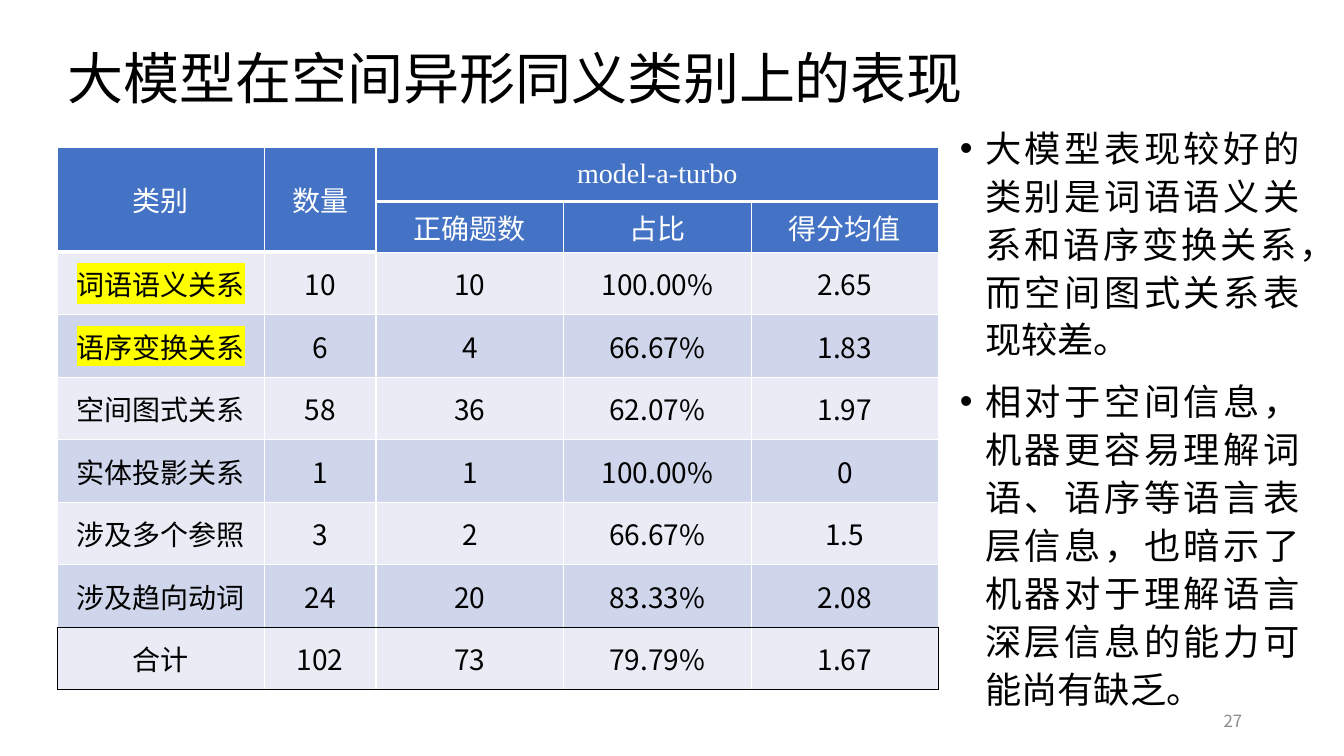
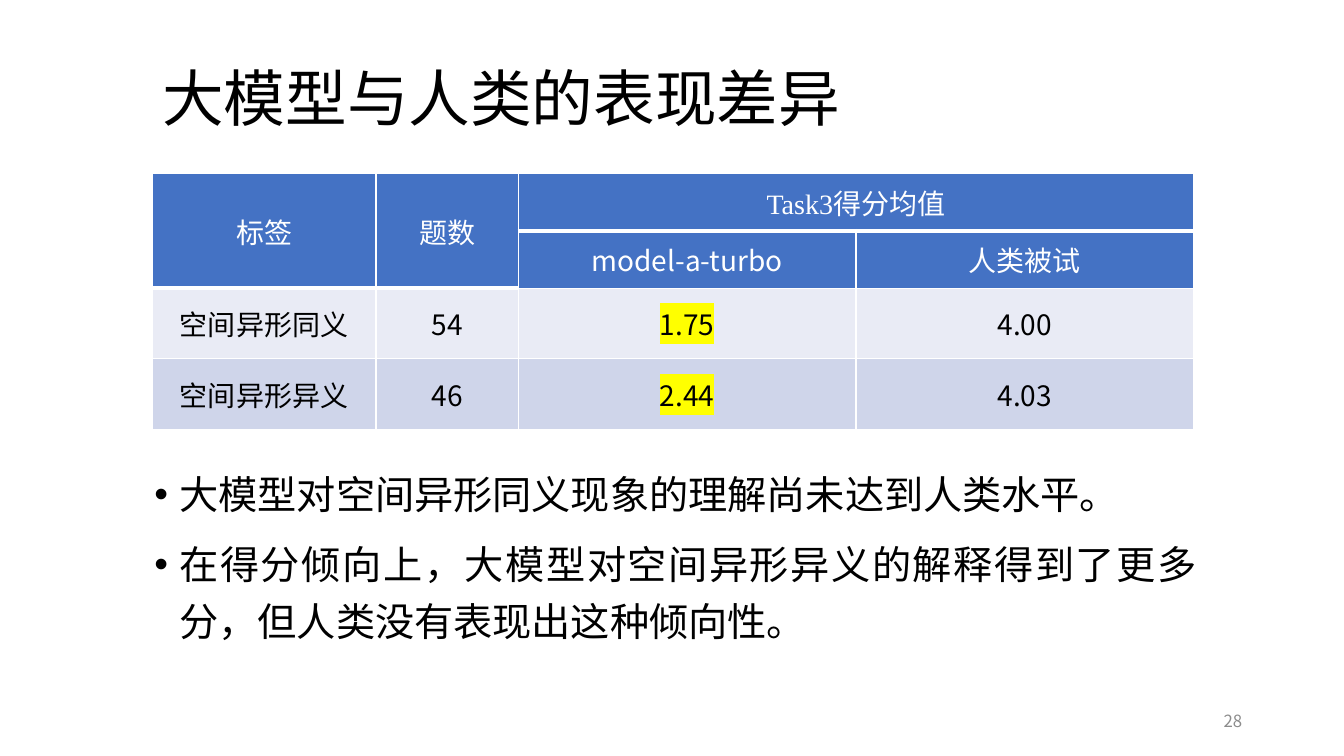
from dataclasses import dataclass

from lxml import etree
from pptx import Presentation
from pptx.dml.color import RGBColor
from pptx.enum.text import MSO_ANCHOR, MSO_AUTO_SIZE, PP_ALIGN
from pptx.oxml.ns import qn
from pptx.util import Emu, Pt

EMU_PER_PX = 9144
SLIDE_WIDTH, SLIDE_HEIGHT = 1333, 750
TITLE_AND_CONTENT = 1

MIDDLE, TOP = MSO_ANCHOR.MIDDLE, MSO_ANCHOR.TOP
LEFT, CENTER, RIGHT, JUSTIFY = PP_ALIGN.LEFT, PP_ALIGN.CENTER, PP_ALIGN.RIGHT, PP_ALIGN.JUSTIFY
NO_AUTOFIT = MSO_AUTO_SIZE.NONE

BLACK = RGBColor(0x00, 0x00, 0x00)
WHITE = RGBColor(0xFF, 0xFF, 0xFF)
GRAY = RGBColor(0x8C, 0x8C, 0x8C)
YELLOW = RGBColor(0xFF, 0xFF, 0x00)
HEADER_BLUE = RGBColor(0x44, 0x72, 0xC4)
BANDS = (RGBColor(0xE9, 0xEB, 0xF5), RGBColor(0xCF, 0xD5, 0xEA))

SANS = "Noto Sans CJK SC"
SERIF = "Times New Roman"
TABLE_SIZE = 20
HEADER_ROWS = 2
LABEL_COLUMNS = 2
BULLET_INDENT = 25


@dataclass(frozen=True)
class Box:
    left: int
    top: int
    width: int
    height: int

    def emu(self) -> tuple[Emu, ...]:
        return tuple(px(n) for n in (self.left, self.top, self.width, self.height))


@dataclass(frozen=True)
class TextBlock:
    box: Box
    size: float
    line_spacing: float
    paragraphs: tuple[str, ...]


@dataclass(frozen=True)
class ResultTable:
    """Two header rows, then data; the columns after the labels share one group header."""
    left: int
    top: int
    columns: tuple[int, ...]
    row_heights: tuple[int, ...]
    rows: tuple[tuple[str, ...], ...]
    highlighted: frozenset[str]
    has_total: bool = False


@dataclass(frozen=True)
class ResultSlide:
    number: int
    title: TextBlock
    table: ResultTable
    body: TextBlock


PAGE_NUMBER_BOX = Box(942, 695, 300, 40)

RESULT_SLIDES = (
    ResultSlide(
        27,
        TextBlock(Box(57, 35, 1219, 92), 40, 0.9, ("大模型在空间异形同义类别上的表现",)),
        ResultTable(
            57, 146, (205, 111) + (186,) * 3, (54, 50) + (62,) * 7,
            (
                ("类别", "数量", "model-a-turbo", "", ""),
                ("", "", "正确题数", "占比", "得分均值"),
                ("词语语义关系", "10", "10", "100.00%", "2.65"),
                ("语序变换关系", "6", "4", "66.67%", "1.83"),
                ("空间图式关系", "58", "36", "62.07%", "1.97"),
                ("实体投影关系", "1", "1", "100.00%", "0"),
                ("涉及多个参照", "3", "2", "66.67%", "1.5"),
                ("涉及趋向动词", "24", "20", "83.33%", "2.08"),
                ("合计", "102", "73", "79.79%", "1.67"),
            ),
            frozenset({"词语语义关系", "语序变换关系"}),
            has_total=True,
        ),
        TextBlock(Box(942, 116, 357, 599), 25.9, 1.1, (
            "大模型表现较好的类别是词语语义关系和语序变换关系，而空间图式关系表现较差。",
            "相对于空间信息，机器更容易理解词语、语序等语言表层信息，"
            "也暗示了机器对于理解语言深层信息的能力可能尚有缺乏。",
        )),
    ),
    ResultSlide(
        28,
        TextBlock(Box(151, 55, 978, 92), 44, 0.9, ("大模型与人类的表现差异",)),
        ResultTable(
            151, 172, (222, 141, 335, 335), (57, 57, 70, 70),
            (
                ("标签", "题数", "Task3得分均值", ""),
                ("", "", "model-a-turbo", "人类被试"),
                ("空间异形同义", "54", "1.75", "4.00"),
                ("空间异形异义", "46", "2.44", "4.03"),
            ),
            frozenset({"1.75", "2.44"}),
        ),
        TextBlock(Box(143, 452, 1054, 274), 28, 1.2, (
            "大模型对空间异形同义现象的理解尚未达到人类水平。",
            "在得分倾向上，大模型对空间异形异义的解释得到了更多分，但人类没有表现出这种倾向性。",
        )),
    ),
)


def px(length: int) -> Emu:
    return Emu(length * EMU_PER_PX)


def add_solid_color(parent, color: RGBColor) -> None:
    etree.SubElement(parent, qn("a:srgbClr"), val=str(color))


def style_runs(paragraph, size: float, color: RGBColor, latin: str = SANS,
               highlight: RGBColor | None = None) -> None:
    for run in paragraph.runs:
        font = run.font
        font.size, font.bold, font.name = Pt(size), False, latin
        font.color.rgb = color
        latin_element = font._element.find(qn("a:latin"))
        east_asian = etree.Element(qn("a:ea"), typeface=SANS)
        latin_element.addnext(east_asian)
        if highlight is not None:
            marker = etree.Element(qn("a:highlight"))
            add_solid_color(marker, highlight)
            latin_element.addprevious(marker)


def fill_placeholder(shape, block: TextBlock, anchor, alignment) -> None:
    shape.left, shape.top, shape.width, shape.height = block.box.emu()
    text_frame = shape.text_frame
    text_frame.text = "\n".join(block.paragraphs)
    text_frame.auto_size = NO_AUTOFIT
    text_frame.word_wrap = True
    text_frame.vertical_anchor = anchor
    for paragraph in text_frame.paragraphs:
        paragraph.alignment = alignment
        paragraph.line_spacing = block.line_spacing
        style_runs(paragraph, block.size, BLACK)


def add_bullets(shape) -> None:
    for paragraph in shape.text_frame.paragraphs:
        paragraph.space_before = Pt(10)
        properties = paragraph._p.get_or_add_pPr()
        properties.set("marL", str(px(BULLET_INDENT)))
        properties.set("indent", str(-px(BULLET_INDENT)))
        etree.SubElement(properties, qn("a:buFont"), typeface="Arial")
        etree.SubElement(properties, qn("a:buChar"), char="•")


def add_border(cell, side: str, color: RGBColor, width: int) -> None:
    properties = cell._tc.get_or_add_tcPr()
    line = etree.SubElement(properties, qn(f"a:ln{side}"), w=str(Pt(width)))
    add_solid_color(etree.SubElement(line, qn("a:solidFill")), color)


def add_borders(cell, row: int, column: int, table: ResultTable) -> None:
    """White grid, with a black outline around the total row."""
    last_row, last_column = len(table.rows) - 1, len(table.columns) - 1
    total = table.has_total and row == last_row
    above_total = table.has_total and row == last_row - 1
    black_sides = {
        "L": total and column == 0,
        "R": total and column == last_column,
        "T": total,
        "B": total or above_total,
    }
    for side, is_black in black_sides.items():
        width = 3 if side == "B" and row == 0 else 1
        add_border(cell, side, BLACK if is_black else WHITE, width)


def fill_cell(cell, text: str, row: int, highlight: RGBColor | None) -> None:
    is_header = row < HEADER_ROWS
    cell.fill.solid()
    cell.fill.fore_color.rgb = HEADER_BLUE if is_header else BANDS[row % 2]
    cell.vertical_anchor = MIDDLE
    cell.text_frame.text = text
    paragraph = cell.text_frame.paragraphs[0]
    paragraph.alignment = CENTER
    style_runs(paragraph, TABLE_SIZE, WHITE if is_header else BLACK,
               SERIF if row == 0 else SANS, highlight)


def add_result_table(slide, data: ResultTable) -> None:
    box = Box(data.left, data.top, sum(data.columns), sum(data.row_heights))
    table = slide.shapes.add_table(len(data.rows), len(data.columns), *box.emu()).table
    table.first_row = table.horz_banding = False
    for column, width in zip(table.columns, data.columns):
        column.width = px(width)
    for row, height in zip(table.rows, data.row_heights):
        row.height = px(height)
    for row, texts in enumerate(data.rows):
        for column, text in enumerate(texts):
            cell = table.cell(row, column)
            add_borders(cell, row, column, data)
            fill_cell(cell, text, row, YELLOW if text in data.highlighted else None)
    for column in range(LABEL_COLUMNS):
        table.cell(0, column).merge(table.cell(HEADER_ROWS - 1, column))
    table.cell(0, LABEL_COLUMNS).merge(table.cell(0, len(data.columns) - 1))


def add_page_number(slide, number: int) -> None:
    text_frame = slide.shapes.add_textbox(*PAGE_NUMBER_BOX.emu()).text_frame
    text_frame.text = str(number)
    text_frame.word_wrap = True
    text_frame.vertical_anchor = MIDDLE
    paragraph = text_frame.paragraphs[0]
    paragraph.alignment = RIGHT
    style_runs(paragraph, 12, GRAY)


def add_result_slide(presentation, content: ResultSlide) -> None:
    slide = presentation.slides.add_slide(presentation.slide_layouts[TITLE_AND_CONTENT])
    fill_placeholder(slide.shapes.title, content.title, MIDDLE, LEFT)
    body = slide.placeholders[1]
    fill_placeholder(body, content.body, TOP, JUSTIFY)
    add_bullets(body)
    add_result_table(slide, content.table)
    add_page_number(slide, content.number)


def main() -> None:
    presentation = Presentation()
    presentation.slide_width, presentation.slide_height = px(SLIDE_WIDTH), px(SLIDE_HEIGHT)
    for content in RESULT_SLIDES:
        add_result_slide(presentation, content)
    presentation.save("out.pptx")


if __name__ == "__main__":
    main()
